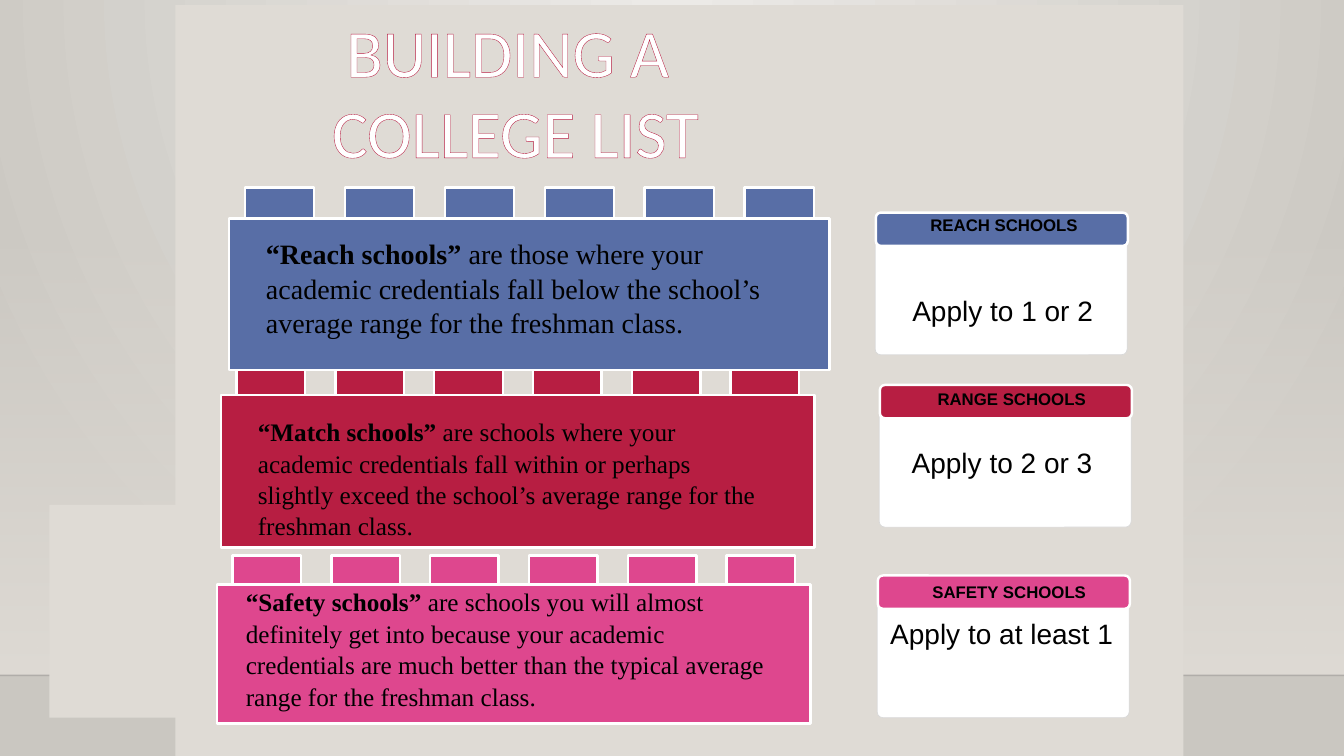
import dataclasses

import pptx
import pptx.dml.color
import pptx.enum.shapes
import pptx.enum.text
import pptx.oxml
import pptx.oxml.ns
import pptx.util

WIDE = pptx.util.Inches(13.33)
HIGH = pptx.util.Inches(7.5)
SHAPE = pptx.enum.shapes.MSO_SHAPE
CENTER = pptx.enum.text.PP_ALIGN.CENTER
INDENT = pptx.util.Inches(0.25)


@dataclasses.dataclass(frozen=True)
class Theme:
    light: str = "ECEAE7"
    dark: str = "CAC7C1"
    paper: str = "DFDBD5"
    white: str = "FFFFFF"
    ink: str = "000000"
    rule: str = "000001"
    edge: str = "D9D9D9"
    reach: str = "586EA6"
    match: str = "B71E42"
    safety: str = "DE478E"
    head_font: str = "Calibri"
    body_font: str = "Times New Roman"
    card_font: str = "Arial"
    title: int = 48
    large: int = 20
    body: int = 18
    label: int = 12


THEME = Theme()


def rgb(code):
    return pptx.dml.color.RGBColor.from_string(code)


def xml(text):
    return pptx.oxml.parse_xml(text.replace(">", f" {pptx.oxml.ns.nsdecls('a')}>", 1))


def place(left, top, width, height):
    """Turn percent shares of the slide into lengths."""
    return (int(WIDE * left / 100), int(HIGH * top / 100),
            int(WIDE * width / 100), int(HIGH * height / 100))


def add_box(slide, area, fill, line=None, weight=1.75, kind=SHAPE.RECTANGLE, round_by=None):
    box = slide.shapes.add_shape(kind, *place(*area))
    box.shadow.inherit = False
    box.fill.solid()
    box.fill.fore_color.rgb = rgb(fill)
    if line:
        box.line.color.rgb = rgb(line)
        box.line.width = pptx.util.Pt(weight)
    else:
        box.line.fill.background()
    if round_by is not None:
        box.adjustments[0] = round_by
    return box


def add_text(slide, area, lines, font, size, color=THEME.ink, align=None,
             hang=False, spacing=None):
    """Write lines, each a list of (text, bold) pairs; return the runs."""
    frame = slide.shapes.add_textbox(*place(*area)).text_frame
    frame.word_wrap = True
    frame.auto_size = pptx.enum.text.MSO_AUTO_SIZE.SHAPE_TO_FIT_TEXT
    runs = []
    for index, line in enumerate(lines):
        para = frame.add_paragraph() if index else frame.paragraphs[0]
        para.alignment = align
        if spacing:
            para.line_spacing = spacing
        if hang:
            props = para._p.get_or_add_pPr()
            props.set("marL", str(INDENT))
            props.set("indent", str(-INDENT))
        for text, bold in line:
            run = para.add_run()
            run.text = text
            run.font.name = font
            run.font.size = pptx.util.Pt(size)
            run.font.bold = bold
            run.font.color.rgb = rgb(color)
            runs.append(run)
    return runs


def set_blend(fill, first, last):
    fill.gradient()
    for stop, code in zip(fill.gradient_stops, (first, last)):
        stop.color.rgb = rgb(code)


def set_alpha(element, percent):
    """Make the first colour inside an element partly clear."""
    color = next(element.iter(pptx.oxml.ns.qn("a:srgbClr")))
    color.append(xml(f'<a:alpha val="{percent * 1000}"/>'.replace("/>", "></a:alpha>")))


def add_scene(slide):
    fill = slide.background.fill
    set_blend(fill, THEME.light, THEME.dark)
    old = next(slide._element.iter(pptx.oxml.ns.qn("a:lin")))
    old.getparent().replace(old, xml(
        '<a:path path="circle"><a:fillToRect l="43000" r="43000" b="100000"/></a:path>'))

    horizon = 89.33
    wall = add_box(slide, (0, 29.47, 100, horizon - 29.47), THEME.paper)
    set_blend(wall.fill, THEME.paper, THEME.paper)
    wall.fill.gradient_angle = 270
    set_alpha(wall._element.spPr, 0)

    level = int(HIGH * horizon / 100)
    floor = slide.shapes.add_connector(
        pptx.enum.shapes.MSO_CONNECTOR.STRAIGHT, 0, level, WIDE, level)
    floor.line.color.rgb = rgb(THEME.rule)
    floor.line.width = pptx.util.Pt(1)
    set_alpha(floor._element.spPr, 20)
    floor._element.spPr.append(xml("<a:effectLst></a:effectLst>"))

    add_box(slide, (13.05, 0.67, 75, 99.33), THEME.paper)
    add_box(slide, (3.68, 66.8, 75, 28.13), THEME.paper)


def add_title(slide):
    lines = [[("BUILDING A ", None)], [("COLLEGE LIST", None)]]
    runs = add_text(slide, (13.35, 0.67, 50, 22.93), lines, THEME.head_font,
                    THEME.title, THEME.white, CENTER, hang=True)
    for run in runs:
        run._r.get_or_add_rPr().insert(0, xml(
            f'<a:ln w="{pptx.util.Pt(0.8)}"><a:solidFill>'
            f'<a:srgbClr val="{THEME.match}"/></a:solidFill></a:ln>'))


def add_brick(slide, area, stud, color, text_area, term, text, size):
    """Draw a toy brick with six studs of the given height, and its text."""
    left, top, width, _ = area
    add_box(slide, area, color, THEME.white)
    for index in range(6):
        start = left + width * (0.0265 + 0.1664 * index)
        add_box(slide, (start, top - stud, width * 0.1155, stud), color, THEME.white)
    add_text(slide, text_area, [[(term, True), (text, False)]],
             THEME.body_font, size, spacing=1.04)


def add_card(slide, left, top, color, label, label_area, advice, advice_area):
    width = 18.75
    add_box(slide, (left, top, width, 18.8), THEME.white, THEME.edge, 0.5,
            SHAPE.ROUNDED_RECTANGLE, 0.04)
    add_box(slide, (left + 0.05, top, width, 4.4), color, THEME.white,
            kind=SHAPE.ROUNDED_RECTANGLE, round_by=0.15)
    add_text(slide, (*advice_area, 5.87), [[(advice, None)]], THEME.card_font,
             THEME.large, align=CENTER)
    add_text(slide, (*label_area, 4), [[(label, True)]], THEME.card_font,
             THEME.label, hang=True)


def main():
    deck = pptx.Presentation()
    deck.slide_width, deck.slide_height = WIDE, HIGH
    slide = deck.slides.add_slide(deck.slide_layouts[6])
    add_scene(slide)
    add_title(slide)

    add_brick(slide, (16.13, 77.33, 44.19, 18.4), 3.87, THEME.safety,
              (17.55, 76.8, 41.04, 17.47), "“Safety schools” ",
              "are schools you will almost definitely get into because your academic "
              "credentials are much better than the typical average range for the "
              "freshman class.", THEME.body)
    add_brick(slide, (16.43, 52.27, 44.19, 20.13), 4.27, THEME.match,
              (18.45, 54.27, 39.31, 17.47), "“Match schools” ",
              "are schools where your academic credentials fall within or perhaps "
              "slightly exceed the school’s average range for the freshman class.",
              THEME.body)
    add_brick(slide, (17.03, 28.93, 44.71, 20), 4.13, THEME.reach,
              (19.05, 30.4, 41.64, 14.8), "“Reach schools” ",
              "are those where your academic credentials fall below the school’s "
              "average range for the freshman class.", THEME.large)

    add_card(slide, 65.12, 28.13, THEME.reach, "REACH SCHOOLS", (68.49, 27.73, 13.13),
             "Apply to 1 or 2", (66.47, 38.13, 16.28))
    add_card(slide, 65.42, 50.93, THEME.match, "RANGE SCHOOLS", (69.02, 50.8, 13.13),
             "Apply to 2 or 3", (65.19, 58.27, 18.75))
    add_card(slide, 65.27, 76.13, THEME.safety, "SAFETY SCHOOLS", (68.64, 76.27, 13.5),
             "Apply to at least 1", (65.19, 80.93, 18.68))
    deck.save("out.pptx")


if __name__ == "__main__":
    main()
